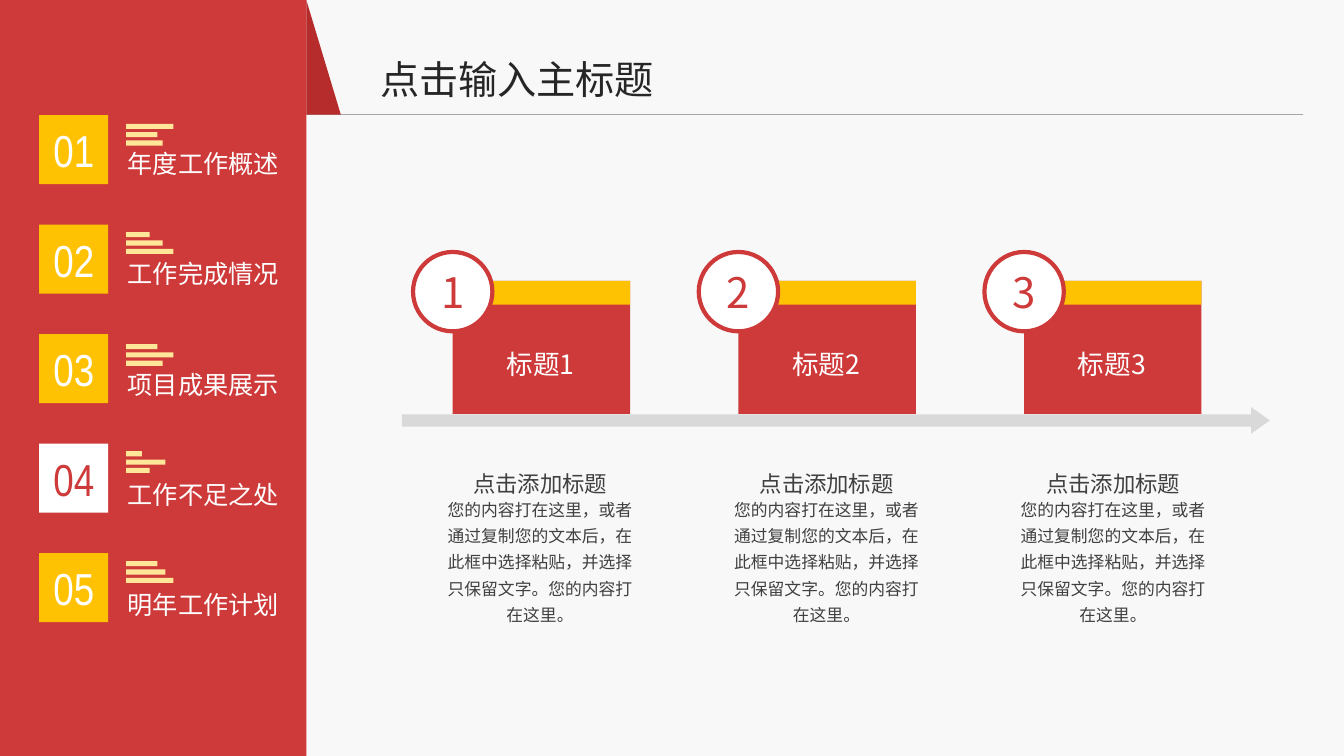
"""Build a sidebar agenda slide with a three-step timeline."""
from lxml import etree
from pptx import Presentation
from pptx import util as u
from pptx.dml.color import RGBColor
from pptx.enum import shapes, text
from pptx.oxml.ns import qn

RED, YELLOW, WHITE, GREY = "CE3A3A", "FEC202", "FFFFFF", "404040"
CJK = "Noto Sans CJK SC"
RECT = shapes.MSO_SHAPE.RECTANGLE
CENTER = text.PP_ALIGN.CENTER
MIDDLE = {"vertical_anchor": text.MSO_ANCHOR.MIDDLE, "word_wrap": True}
GROW = {"auto_size": text.MSO_AUTO_SIZE.SHAPE_TO_FIT_TEXT}
LABEL = {**GROW, "word_wrap": False}
SMALL_INSET = {"margin_left": u.Cm(0.2), "margin_right": u.Cm(0.2),
               "margin_top": u.Cm(0.1), "margin_bottom": u.Cm(0.1)}
BLOCK = {**GROW, **SMALL_INSET, "word_wrap": True}
FLAT_BLOCK = {**BLOCK, "margin_top": 0, "margin_bottom": 0}


def add_box(kind, at, color=None):
    """Add a filled preset shape, or a text box when kind is None."""
    at = [u.Cm(v) for v in at]
    if kind is None:
        return s.shapes.add_textbox(*at)
    sp = s.shapes.add_shape(kind, *at)
    sp.shadow.inherit = False
    sp.fill.solid()
    sp.fill.fore_color.rgb = RGBColor.from_string(color)
    sp.line.fill.background()
    return sp


def write(sp, words, size, color, frame, font=CJK, align=None, spacing=None):
    """Put one formatted run into a shape."""
    tf = sp.text_frame
    for name, value in frame.items():
        setattr(tf, name, value)
    p = tf.paragraphs[0]
    for name, value in {"alignment": align, "line_spacing": spacing}.items():
        setattr(p, name, value)
    r = p.add_run()
    r.text = words
    for name, value in {"size": u.Pt(size), "name": font}.items():
        setattr(r.font, name, value)
    r.font.color.rgb = RGBColor.from_string(color)
    etree.SubElement(r.font._element, qn("a:ea"), typeface=font)


prs = Presentation()
prs.slide_width, prs.slide_height = u.Cm(33.87), u.Cm(19.05)
s = prs.slides.add_slide(prs.slide_layouts[6])

add_box(RECT, (4.37, 0, 29.5, 19.05), "F8F8F8")
rule = s.shapes.add_connector(shapes.MSO_CONNECTOR.STRAIGHT,
                              u.Cm(7.72), u.Cm(2.89), u.Cm(32.84), u.Cm(2.89))
rule.line.color.rgb = RGBColor.from_string("A6A6A6")
rule.line.width = u.Pt(0.75)
etree.SubElement(rule._element.spPr, qn("a:effectLst"))
add_box(RECT, (0, 0, 7.72, 19.05), RED)
add_box(shapes.MSO_SHAPE.RIGHT_TRIANGLE, (7.72, 0, 0.87, 2.89), "B62C2C")

agenda = [
    ("年度工作概述", 3.12, (1.19, 0.79, 0.92)),
    ("工作完成情况", 5.85, (0.59, 0.92, 1.19)),
    ("项目成果展示", 8.67, (0.79, 1.19, 0.92)),
    ("工作不足之处", 11.37, (0.4, 0.99, 0.59)),
    ("明年工作计划", 14.14, (0.79, 0.99, 1.19)),
]
for i, (label, bars_top, bars) in enumerate(agenda):
    write(add_box(None, (2.97, 3.61 + 2.78 * i, 4.37, 1.02)),
          label, 18, WHITE, LABEL)
    for j, width in enumerate(bars):
        add_box(RECT, (3.18, bars_top + 0.21 * j, width, 0.13), "FFE699")
    fill, ink = (WHITE, RED) if i == 3 else (YELLOW, WHITE)
    write(add_box(RECT, (0.99, 2.9 + 2.76 * i, 1.74, 1.74), fill),
          f"{i + 1:02}", 32, ink, MIDDLE, "Arial Narrow", CENTER)

write(add_box(None, (9.33, 1.28, 7.5, 1.45)), "点击输入主标题", 28, "262626", LABEL)

arrow = add_box(shapes.MSO_SHAPE.RIGHT_ARROW, (10.13, 10.26, 21.87, 0.67), "D9D9D9")
arrow.adjustments[0], arrow.adjustments[1] = 0.46, 0.7

body = ("您的内容打在这里，或者通过复制您的文本后，在此框中选择粘贴，"
        "并选择只保留文字。您的内容打在这里。")
for i in range(3):
    x = 11.41 + 7.2 * i
    add_box(RECT, (x, 7.08, 4.47, 3.35), RED)
    add_box(RECT, (x, 7.08, 4.47, 0.6), YELLOW)
    badge = add_box(shapes.MSO_SHAPE.OVAL, (x - 1, 6.35, 2, 2), WHITE)
    badge.line.color.rgb = RGBColor.from_string(RED)
    badge.line.width = u.Pt(3)
    write(badge, str(i + 1), 30, RED, {**MIDDLE, **SMALL_INSET}, align=CENTER)
    write(add_box(None, (x + 1.03, 8.36, 2.36, 1.24)),
          f"标题{i + 1}", 19, WHITE, FLAT_BLOCK, align=CENTER, spacing=1.5)
    text_x = 11.34 + 7.22 * i
    write(add_box(None, (text_x, 11.4, 4.55, 1.09)),
          "点击添加标题", 16, GREY, BLOCK, align=CENTER, spacing=1.5)
    write(add_box(None, (text_x - 0.41, 12.34, 5.36, 3.53)),
          body, 12, GREY, BLOCK, align=CENTER, spacing=1.3)

prs.save("out.pptx")
